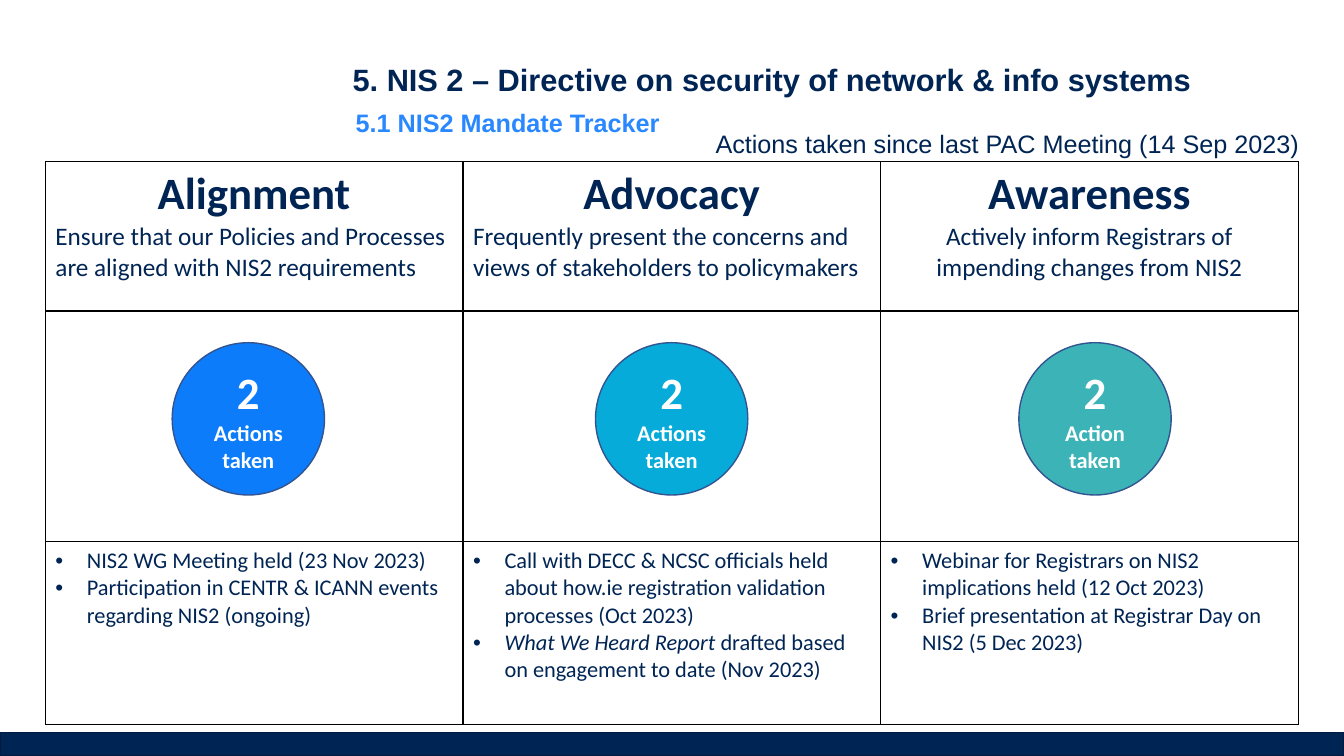
from lxml import etree
from pptx import Presentation
from pptx.dml.color import RGBColor
from pptx.enum.shapes import MSO_SHAPE as Shape
from pptx.enum.text import MSO_ANCHOR as Anchor, MSO_AUTO_SIZE as AutoSize, PP_ALIGN as Align
from pptx.oxml.ns import qn
from pptx.util import Pt

NAVY, WHITE = "002554", "FFFFFF"
COLUMN_WIDTH = 298.3
ROW_HEIGHTS = (106.6, 164.9, 130.3)
PILLARS = [
    ("Alignment", "Ensure that our Policies and Processes are aligned with NIS2 requirements",
     Align.LEFT, "Actions taken", "0C7CFA",
     [[("NIS2 WG Meeting held (23 Nov 2023)", False)],
      [("Participation in CENTR & ICANN events regarding NIS2 (ongoing)", False)]]),
    ("Advocacy", "Frequently present the concerns and views of stakeholders to policymakers",
     Align.LEFT, "Actions taken", "07ABD9",
     [[("Call with DECC & NCSC officials held about how.ie registration validation "
        "processes (Oct 2023)", False)],
      [("What We Heard Report ", True),
       ("drafted based on engagement to date (Nov 2023)", False)]]),
    ("Awareness", "Actively inform Registrars of impending changes from NIS2",
     Align.CENTER, "Action taken", "3CB4B7",
     [[("Webinar for Registrars on NIS2 implications held (12 Oct 2023)", False)],
      [("Brief presentation at Registrar Day on NIS2 (5 Dec 2023)", False)]]),
]


def rgb(value):
    return RGBColor.from_string(value)


def write(paragraph, text, size=18, color=NAVY, font="Calibri", bold=False,
          italic=False, align=Align.LEFT):
    paragraph.alignment = align
    run = paragraph.add_run()
    run.text = text
    run.font.size = Pt(size)
    run.font.name = font
    run.font.bold = bold
    run.font.italic = italic
    run.font.color.rgb = rgb(color)


def next_paragraph(frame, index):
    return frame.paragraphs[0] if index == 0 else frame.add_paragraph()


def add_heading(slide, text, left, top, width, height, **style):
    box = slide.shapes.add_textbox(Pt(left), Pt(top), Pt(width), Pt(height))
    box.text_frame.word_wrap = True
    write(box.text_frame.paragraphs[0], text, font="Arial", **style)


def place_title(slide, text):
    title = slide.shapes.title
    title.left, title.top, title.width, title.height = Pt(231), Pt(39.6), Pt(641), Pt(34)
    frame = title.text_frame
    frame.auto_size = AutoSize.NONE
    frame.word_wrap = True
    frame.vertical_anchor = Anchor.TOP
    write(frame.paragraphs[0], text, size=22, font="Arial", bold=True, align=Align.CENTER)


def add_filled(slide, kind, left, top, width, height, fill, line):
    shape = slide.shapes.add_shape(kind, Pt(left), Pt(top), Pt(width), Pt(height))
    shape.shadow.inherit = False
    shape.fill.solid()
    shape.fill.fore_color.rgb = rgb(fill)
    shape.line.color.rgb = rgb(line)
    shape.line.width = Pt(1)
    return shape


def add_count_circle(slide, column, label, fill):
    circle = add_filled(slide, Shape.OVAL, 123 + 302.4 * column, 244.8, 108.8, 108.8,
                        fill, "325491")
    frame = circle.text_frame
    frame.word_wrap = True
    frame.vertical_anchor = Anchor.MIDDLE
    for index, (text, size) in enumerate([("2", 32), (label, 16)]):
        write(next_paragraph(frame, index), text, size=size, color=WHITE, bold=True,
              align=Align.CENTER)


def make_bullet(paragraph):
    properties = paragraph._p.get_or_add_pPr()
    properties.set("marL", str(Pt(22.5)))
    properties.set("indent", str(-Pt(22.5)))
    etree.SubElement(properties, qn("a:buFont"), typeface="Arial")
    etree.SubElement(properties, qn("a:buChar"), char="•")


def outline_cell(cell):
    cell.fill.background()
    properties = cell._tc.get_or_add_tcPr()
    for index, side in enumerate(("lnL", "lnR", "lnT", "lnB")):
        border = etree.Element(qn(f"a:{side}"), w=str(Pt(1)))
        solid = etree.SubElement(border, qn("a:solidFill"))
        etree.SubElement(solid, qn("a:srgbClr"), val="000000")
        properties.insert(index, border)


def add_tracker(slide):
    tracker = slide.shapes.add_table(
        len(ROW_HEIGHTS), len(PILLARS), Pt(32.4), Pt(115.6),
        Pt(COLUMN_WIDTH * len(PILLARS)), Pt(sum(ROW_HEIGHTS))).table
    tracker.first_row = False
    tracker.horz_banding = False
    for row, height in zip(tracker.rows, ROW_HEIGHTS):
        row.height = Pt(height)
    for cell in tracker.iter_cells():
        outline_cell(cell)
    for column, (name, aim, aim_align, _, _, actions) in enumerate(PILLARS):
        tracker.columns[column].width = Pt(COLUMN_WIDTH)
        header = tracker.cell(0, column).text_frame
        write(header.paragraphs[0], name, size=32, bold=True, align=Align.CENTER)
        write(header.add_paragraph(), aim, align=aim_align)
        details = tracker.cell(2, column).text_frame
        for index, pieces in enumerate(actions):
            paragraph = next_paragraph(details, index)
            make_bullet(paragraph)
            for text, italic in pieces:
                write(paragraph, text, size=16, italic=italic)


def main():
    deck = Presentation()
    deck.slide_width, deck.slide_height = Pt(960), Pt(540)
    slide = deck.slides.add_slide(deck.slide_layouts[5])
    add_filled(slide, Shape.RECTANGLE, 0, 523.4, 960, 16.6, NAVY, "001B3E")
    place_title(slide, "5. NIS 2 – Directive on security of network & info systems")
    add_heading(slide, "5.1 NIS2 Mandate Tracker", 247, 73.4, 338, 29,
                color="2A88FF", bold=True)
    add_heading(slide, "Actions taken since last PAC Meeting (14 Sep 2023)",
                504, 88, 456, 29)
    add_tracker(slide)
    for column, (_, _, _, label, fill, _) in enumerate(PILLARS):
        add_count_circle(slide, column, label, fill)
    deck.save("out.pptx")


if __name__ == "__main__":
    main()
